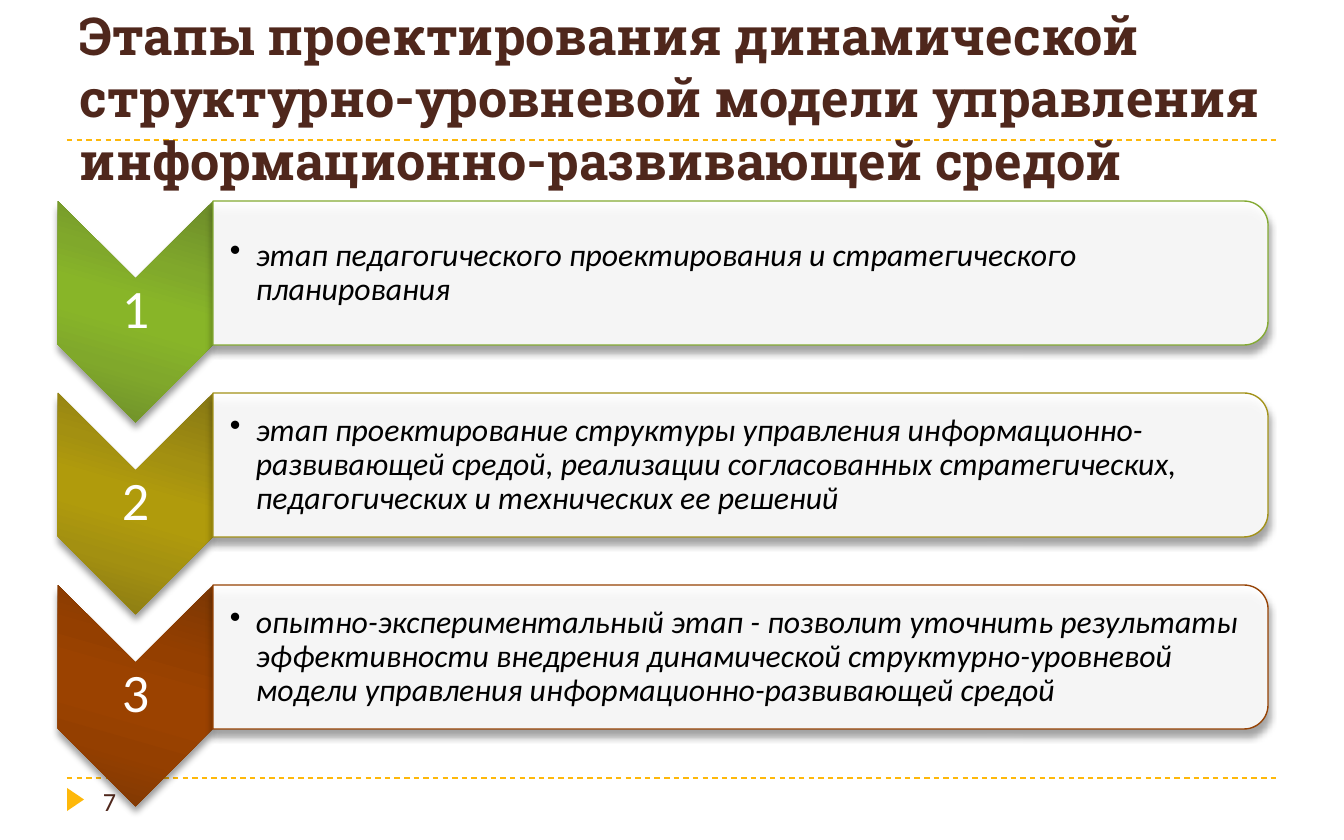
from lxml import etree
from pptx import Presentation
from pptx.dml.color import RGBColor
from pptx.enum.dml import MSO_LINE
from pptx.enum.shapes import MSO_CONNECTOR, MSO_SHAPE
from pptx.enum.text import MSO_ANCHOR, PP_ALIGN
from pptx.oxml import parse_xml
from pptx.oxml.ns import nsdecls, qn
from pptx.util import Emu, Pt

WIDE, HIGH = 1344, 840
SCALE = 9144000 / WIDE
HEX = {"gold": "FEB80A", "brown": "4F271C", "white": "FFFFFF", "black": "000000"}

# Each stage: text, panel outline, chevron shades from edge to middle
STAGES = [
    ("этап педагогического проектирования и стратегического планирования",
     "84AA33", ("6C8B2A", "80A82B", "88B528")),
    ("этап проектирование структуры управления информационно- развивающей средой, "
     "реализации согласованных стратегических, педагогических и технических ее решений",
     "A39219", ("867714", "A39011", "B09B0C")),
    ("опытно-экспериментальный этап - позволит уточнить результаты эффективности "
     "внедрения динамической структурно-уровневой модели управления "
     "информационно-развивающей средой",
     "964305", ("7B3704", "943F00", "9B4200")),
]
STOPS = ((0, 0), (30, 1), (45, 2), (55, 2), (73, 1), (100, 0))


def px(num):
    return Emu(round(num * SCALE))


def rgb(code):
    return RGBColor.from_string(code)


def text(slide, box, words, size, color, font="Calibri", bold=False, italic=False,
         align=PP_ALIGN.LEFT, anchor=MSO_ANCHOR.TOP, pad=(13, 7, 13, 7),
         space=None, bullet=0):
    frame = slide.shapes.add_textbox(*map(px, box)).text_frame
    frame.word_wrap = True
    frame.vertical_anchor = anchor
    (frame.margin_left, frame.margin_top,
     frame.margin_right, frame.margin_bottom) = map(px, pad)
    para = frame.paragraphs[0]
    if bullet:
        props = para._p.get_or_add_pPr()
        props.set("marL", str(px(bullet)))
        props.set("indent", str(-px(bullet)))
        etree.SubElement(props, qn("a:buChar")).set("char", "•")
    para.alignment = align
    if space:
        para.line_spacing = space
    run = para.add_run()
    run.text = words
    run.font.size, run.font.name = Pt(size), font
    run.font.bold, run.font.italic = bold, italic
    run.font.color.rgb = rgb(HEX[color])


def dash(slide, top):
    line = slide.shapes.add_connector(
        MSO_CONNECTOR.STRAIGHT, *map(px, (67, top, 1277, top)))
    line.line.color.rgb = rgb(HEX["gold"])
    line.line.width = Pt(0.75)
    line.line.dash_style = MSO_LINE.DASH
    etree.SubElement(line._element.spPr, qn("a:effectLst"))


def turn(slide, kind, box, fill, edge=None):
    """Add a shape turned a quarter clockwise that covers the box."""
    left, top, wide, high = box
    shift = (wide - high) / 2
    shape = slide.shapes.add_shape(
        kind, px(left + shift), px(top - shift), px(high), px(wide))
    shape.rotation = 90
    shape.shadow.inherit = False
    shape.fill.solid()
    shape.fill.fore_color.rgb = rgb(fill)
    if edge:
        shape.line.color.rgb = rgb(edge)
        shape.line.width = Pt(0.75)
    else:
        shape.line.fill.background()
    return shape


def shade(shape):
    effect = shape._element.spPr.find(qn("a:effectLst"))
    effect.append(parse_xml(
        f'<a:outerShdw {nsdecls("a")} blurRad="50800" dist="43000" dir="5400000" '
        'rotWithShape="0"><a:srgbClr val="000000"><a:alpha val="40000"/>'
        '</a:srgbClr></a:outerShdw>'))


def blend(shape, tones):
    stops = "".join(
        f'<a:gs pos="{pos * 1000}"><a:srgbClr val="{tones[tone]}"/></a:gs>'
        for pos, tone in STOPS)
    props = shape._element.spPr
    props.replace(props.find(qn("a:solidFill")), parse_xml(
        f'<a:gradFill {nsdecls("a")} rotWithShape="1"><a:gsLst>{stops}</a:gsLst>'
        '<a:lin ang="960000" scaled="1"/></a:gradFill>'))


def stage(slide, box, num, words, edge, tones):
    left, top, wide, high = box
    arm = 155
    # Chevron with its number
    arrow = turn(slide, MSO_SHAPE.CHEVRON, (left, top, arm, 221), tones[0])
    blend(arrow, tones)
    shade(arrow)
    text(slide, (left, top + 77, arm, 66), str(num), 29, "white",
         align=PP_ALIGN.CENTER, anchor=MSO_ANCHOR.MIDDLE, pad=(2, 2, 2, 2), space=0.9)
    # Panel with its bullet
    panel = turn(slide, MSO_SHAPE.ROUND_2_SAME_RECTANGLE,
                 (left + arm, top, wide - arm, high), HEX["white"], edge)
    tint = panel._element.spPr.find(qn("a:solidFill"))[0]
    etree.SubElement(tint, qn("a:alpha")).set("val", "90000")
    shade(panel)
    text(slide, (left + arm, top + 7, wide - arm - 7, high - 14), words, 17, "black",
         italic=True, anchor=MSO_ANCHOR.MIDDLE, pad=(17, 1, 1, 1), space=0.9, bullet=26)


def header(slide, box):
    left, top, wide, high = box
    dash(slide, top + 121)
    text(slide, box, "Этапы проектирования динамической структурно-уровневой модели "
         "управления информационно-развивающей средой", 28, "brown",
         font="Roboto Slab", bold=True, anchor=MSO_ANCHOR.BOTTOM)


def footer(slide, box):
    left, top, wide, high = box
    dash(slide, top)
    turn(slide, MSO_SHAPE.ISOSCELES_TRIANGLE, (left, top + 10, 17, 23), HEX["gold"])
    text(slide, (left + 23, top, wide - 23, high), "7", 14, "brown")


def main():
    deck = Presentation()
    deck.slide_width, deck.slide_height = px(WIDE), px(HIGH)
    slide = deck.slides.add_slide(deck.slide_layouts[6])
    footer(slide, (67, 778, 315, 44))
    header(slide, (67, 19, 1210, 179))
    for row, (words, edge, tones) in enumerate(STAGES):
        stage(slide, (58, 201 + 192 * row, 1210, 144), row + 1, words, edge, tones)
    deck.save("out.pptx")


if __name__ == "__main__":
    main()
